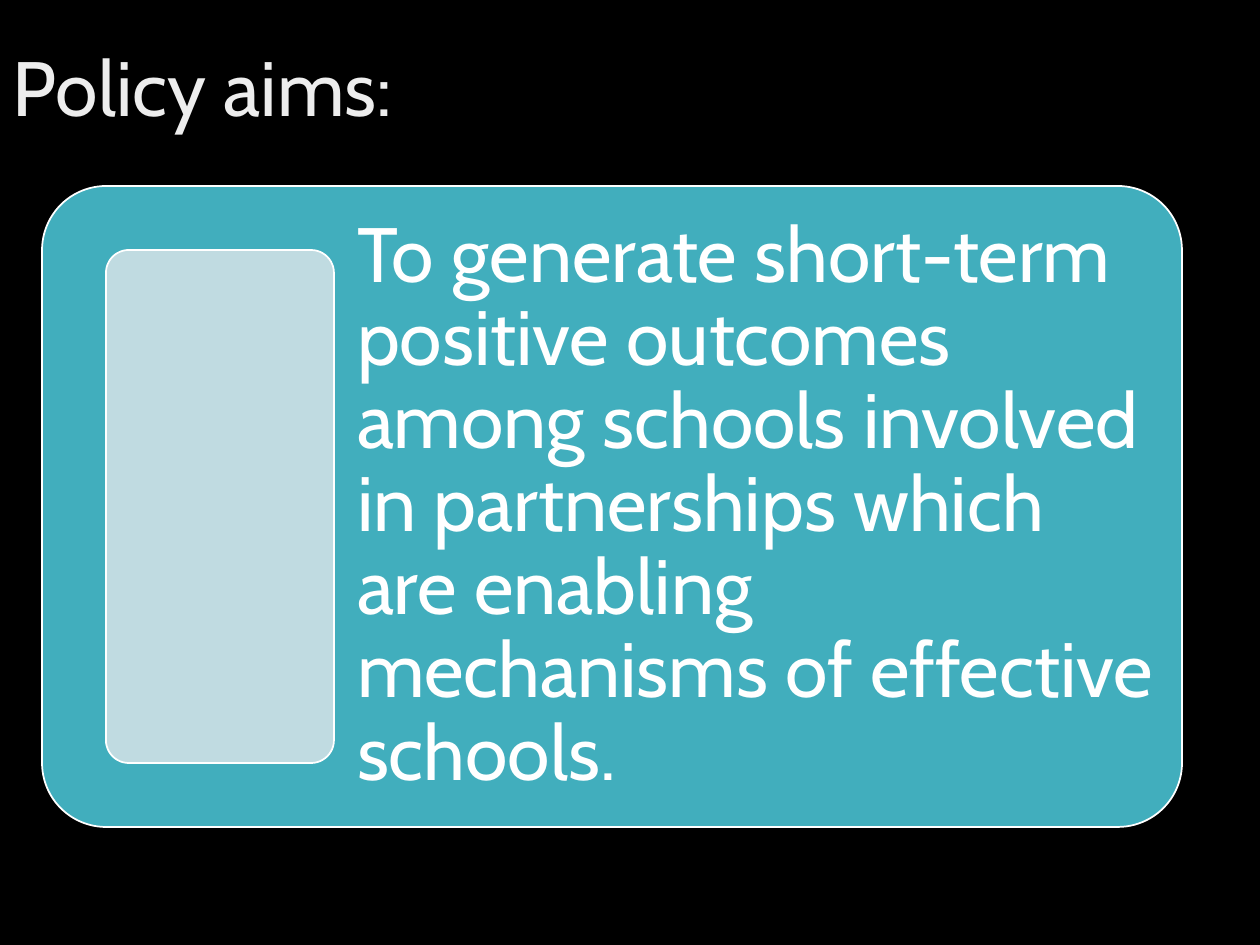
from dataclasses import dataclass

from pptx import Presentation
from pptx.dml.color import RGBColor
from pptx.enum.shapes import MSO_SHAPE
from pptx.enum.text import MSO_ANCHOR, PP_ALIGN
from pptx.util import Pt

ROUNDED = MSO_SHAPE.ROUNDED_RECTANGLE
MIDDLE = MSO_ANCHOR.MIDDLE
LEFT = PP_ALIGN.LEFT

TITLE = "Policy aims:"
AIM = (
    "To generate short-term positive outcomes among schools involved in "
    "partnerships which are enabling mechanisms of effective schools."
)

EMU_PER_PX = 914400 / 126
SLIDE_SIZE = (1260, 945)
TITLE_BOX = (0, 0, 1086, 183)
CARD_BOX = (42, 186, 1140, 641)


@dataclass(frozen=True)
class Theme:
    font: str = "Cabin"
    text_size: int = 44
    line_spacing: float = 0.9
    outline_width: int = 1
    corner: float = 0.1
    background: str = "000000"
    title: str = "EDEDED"
    text: str = "FFFFFF"
    outline: str = "FFFFFF"
    card: str = "41AEBD"
    panel: str = "C0DBE1"


THEME = Theme()


def px(length):
    return round(length * EMU_PER_PX)


def rgb(color):
    return RGBColor.from_string(color)


def add_rounded(slide, box, color):
    shape = slide.shapes.add_shape(ROUNDED, *map(px, box))
    shape.adjustments[0] = THEME.corner
    shape.shadow.inherit = False
    shape.fill.solid()
    shape.fill.fore_color.rgb = rgb(color)
    shape.line.color.rgb = rgb(THEME.outline)
    shape.line.width = Pt(THEME.outline_width)


def add_text(slide, box, text, color, inset_x, inset_y):
    frame = slide.shapes.add_textbox(*map(px, box)).text_frame
    frame.word_wrap = True
    frame.vertical_anchor = MIDDLE
    frame.margin_left = frame.margin_right = px(inset_x)
    frame.margin_top = frame.margin_bottom = px(inset_y)
    paragraph = frame.paragraphs[0]
    paragraph.alignment = LEFT
    paragraph.line_spacing = THEME.line_spacing
    run = paragraph.add_run()
    run.text = text
    run.font.name = THEME.font
    run.font.size = Pt(THEME.text_size)
    run.font.color.rgb = rgb(color)


def main():
    prs = Presentation()
    prs.slide_width, prs.slide_height = map(px, SLIDE_SIZE)
    slide = prs.slides.add_slide(prs.slide_layouts[6])
    slide.background.fill.solid()
    slide.background.fill.fore_color.rgb = rgb(THEME.background)

    left, top, width, height = CARD_BOX
    margin = round(height / 10)
    panel_width = width // 5
    panel_box = (left + margin, top + margin, panel_width, height - 2 * margin)
    aim_left = left + margin + panel_width
    aim_box = (aim_left, top, left + width - aim_left, height)

    add_text(slide, TITLE_BOX, TITLE, THEME.title, 13, 6)
    add_rounded(slide, CARD_BOX, THEME.card)
    add_text(slide, aim_box, AIM, THEME.text, 23, 23)
    add_rounded(slide, panel_box, THEME.panel)
    prs.save("out.pptx")


if __name__ == "__main__":
    main()
